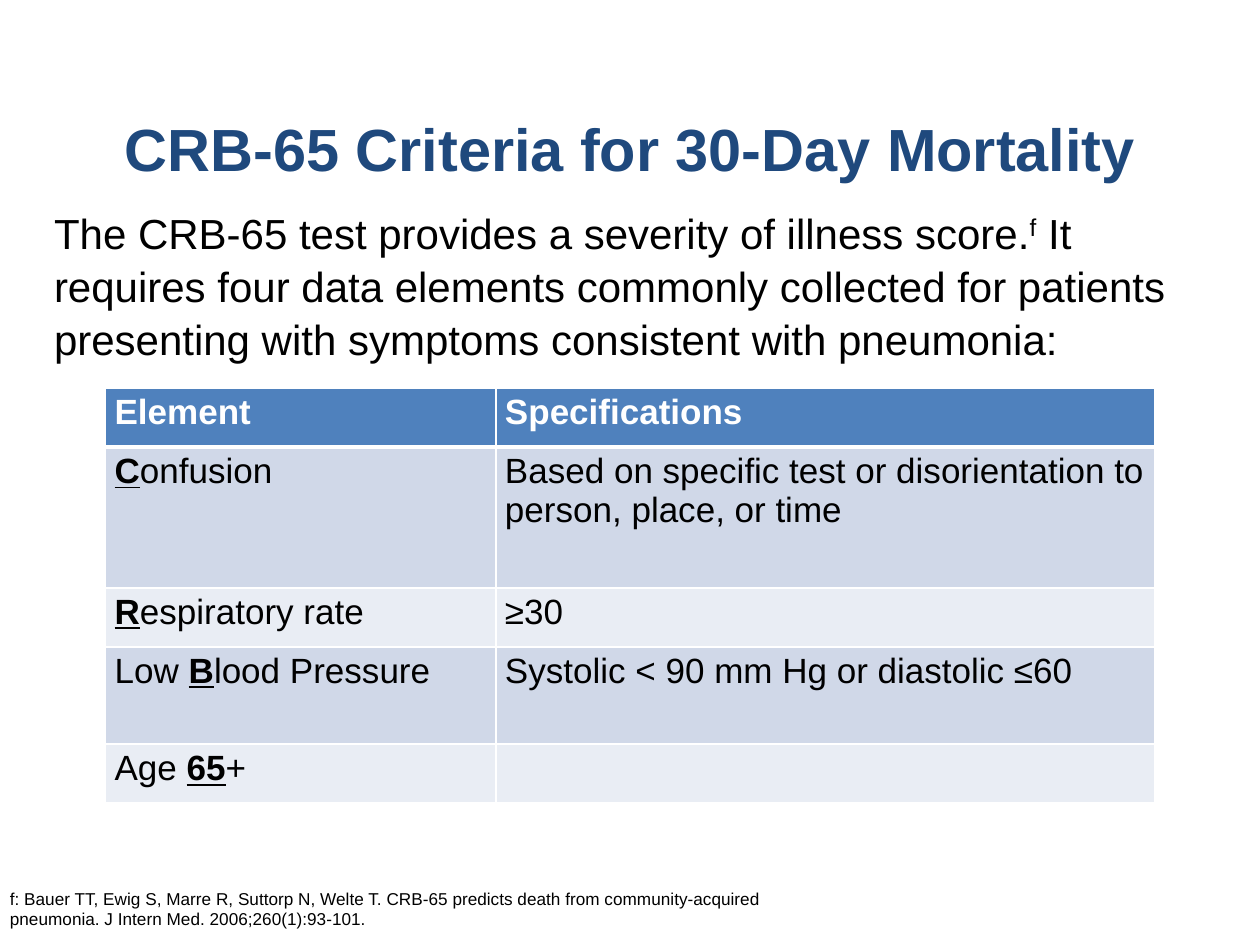
from dataclasses import dataclass

from lxml.etree import SubElement
from pptx import Presentation
from pptx.dml.color import RGBColor
from pptx.enum.text import MSO_ANCHOR, PP_ALIGN
from pptx.oxml.ns import qn
from pptx.util import Cm, Pt


@dataclass(frozen=True)
class Theme:
    font: str = "Arial"
    title: str = "1F497D"
    text: str = "000000"
    white: str = "FFFFFF"
    header_fill: str = "4F81BD"
    band_fills: tuple = ("D0D8E8", "E9EDF4")
    title_size: float = 34
    body_size: float = 24
    table_size: float = 20
    footnote_size: float = 9.8


theme = Theme()


def add_runs(paragraph, text, size, color, bold=False):
    """Fill the paragraph; parts between asterisks become bold and underlined."""
    for index, part in enumerate(text.split("*")):
        if not part:
            continue
        run = paragraph.add_run()
        run.text = part
        emphasised = index % 2 == 1
        run.font.name = theme.font
        run.font.size = Pt(size)
        run.font.color.rgb = RGBColor.from_string(color)
        run.font.bold = bold or emphasised
        run.font.underline = emphasised


def set_borders(cell, widths):
    """Draw white borders; widths are points keyed by side, L, R, T and B."""
    properties = cell._tc.get_or_add_tcPr()
    for position, (side, width) in enumerate(widths.items()):
        line = SubElement(properties, qn(f"a:ln{side}"), w=str(Pt(width)))
        fill = SubElement(line, qn("a:solidFill"))
        SubElement(fill, qn("a:srgbClr"), val=theme.white)
        properties.insert(position, line)


presentation = Presentation()
presentation.slide_width = Cm(25.4)
presentation.slide_height = Cm(19.05)
slide = presentation.slides.add_slide(presentation.slide_layouts[6])

# Title
title = slide.shapes.add_textbox(Cm(1.27), Cm(2.11), Cm(22.86), Cm(1.73))
title.text_frame.word_wrap = True
title.text_frame.vertical_anchor = MSO_ANCHOR.MIDDLE
paragraph = title.text_frame.paragraphs[0]
paragraph.alignment = PP_ALIGN.CENTER
add_runs(paragraph, "CRB-65 Criteria for 30-Day Mortality",
         theme.title_size, theme.title, bold=True)

# Introduction with a superscript footnote mark
introduction = slide.shapes.add_textbox(Cm(0.84), Cm(4.01), Cm(23.93), Cm(4.65))
introduction.text_frame.word_wrap = True
paragraph = introduction.text_frame.paragraphs[0]
paragraph.line_spacing = 1.05
for text in (
    "The CRB-65 test provides a severity of illness score.",
    "f",
    " It requires four data elements commonly collected for patients "
    "presenting with symptoms consistent with pneumonia:",
):
    add_runs(paragraph, text, theme.body_size, theme.text)
paragraph.runs[1].font._element.set("baseline", "30000")

# Criteria table
criteria = (
    ("Element", "Specifications"),
    ("*C*onfusion",
     "Based on specific test or disorientation to person, place, or time"),
    ("*R*espiratory rate", "≥30"),
    ("Low *B*lood Pressure", "Systolic < 90 mm Hg or diastolic ≤60"),
    ("Age *65*+", ""),
)
column_widths = (7.87, 13.28)
row_heights = (1.19, 2.84, 1.19, 1.96, 1.19)
table = slide.shapes.add_table(
    len(criteria), len(column_widths), Cm(2.13), Cm(7.82),
    Cm(sum(column_widths)), Cm(sum(row_heights)),
).table
for column, width in zip(table.columns, column_widths):
    column.width = Cm(width)
for row_index, (row, texts) in enumerate(zip(table.rows, criteria)):
    row.height = Cm(row_heights[row_index])
    is_header = row_index == 0
    fill_color = theme.header_fill if is_header else theme.band_fills[(row_index - 1) % 2]
    text_color = theme.white if is_header else theme.text
    borders = {"L": 1, "R": 1, "T": 3 if row_index == 1 else 1, "B": 3 if is_header else 1}
    for cell, text in zip(row.cells, texts):
        cell.margin_left = cell.margin_right = Cm(0.18)
        cell.margin_top = cell.margin_bottom = Cm(0.1)
        cell.fill.solid()
        cell.fill.fore_color.rgb = RGBColor.from_string(fill_color)
        set_borders(cell, borders)
        add_runs(cell.text_frame.paragraphs[0], text,
                 theme.table_size, text_color, bold=is_header)

# Footnote
footnote = slide.shapes.add_textbox(Cm(-0.05), Cm(17.78), Cm(17.42), Cm(1.09))
footnote.text_frame.word_wrap = True
add_runs(
    footnote.text_frame.paragraphs[0],
    "f: Bauer TT, Ewig S, Marre R, Suttorp N, Welte T. CRB-65 predicts death from "
    "community-acquired pneumonia. J Intern Med. 2006;260(1):93-101.",
    theme.footnote_size, theme.text,
)

presentation.save("out.pptx")
